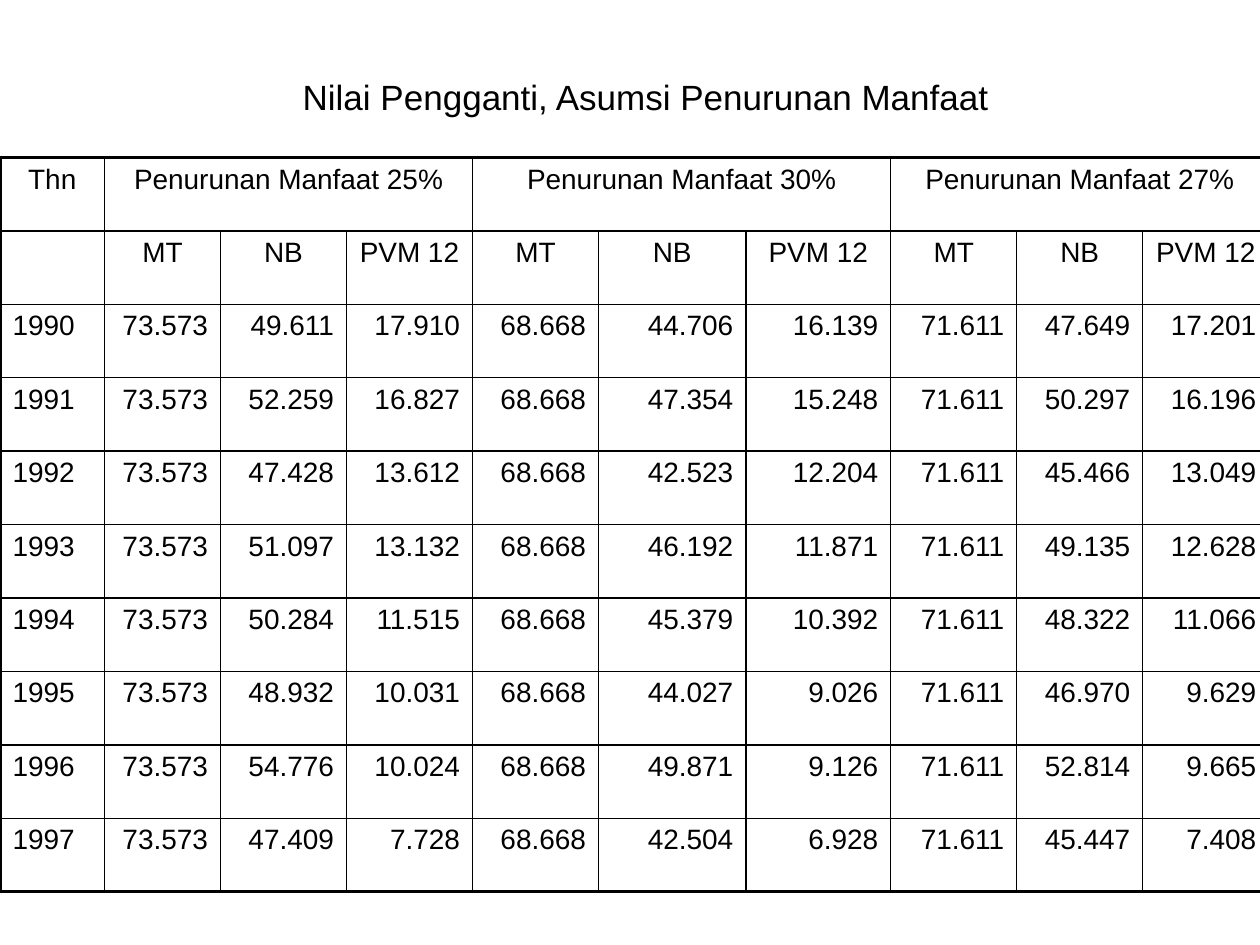
from lxml.etree import SubElement
from pptx import Presentation
from pptx.dml.color import RGBColor
from pptx.enum.text import MSO_ANCHOR as Anchor, PP_ALIGN as Align
from pptx.oxml.ns import qn
from pptx.util import Inches, Pt

TITLE = "Nilai Pengganti, Asumsi Penurunan Manfaat"
GROUPS = ["Penurunan Manfaat 25%", "Penurunan Manfaat 30%", "Penurunan Manfaat 27%"]
MEASURES = ["MT", "NB", "PVM 12"]
YEARS = [
    ("1990", "73.573", "49.611", "17.910", "68.668", "44.706", "16.139", "71.611", "47.649", "17.201"),
    ("1991", "73.573", "52.259", "16.827", "68.668", "47.354", "15.248", "71.611", "50.297", "16.196"),
    ("1992", "73.573", "47.428", "13.612", "68.668", "42.523", "12.204", "71.611", "45.466", "13.049"),
    ("1993", "73.573", "51.097", "13.132", "68.668", "46.192", "11.871", "71.611", "49.135", "12.628"),
    ("1994", "73.573", "50.284", "11.515", "68.668", "45.379", "10.392", "71.611", "48.322", "11.066"),
    ("1995", "73.573", "48.932", "10.031", "68.668", "44.027", "9.026", "71.611", "46.970", "9.629"),
    ("1996", "73.573", "54.776", "10.024", "68.668", "49.871", "9.126", "71.611", "52.814", "9.665"),
    ("1997", "73.573", "47.409", "7.728", "68.668", "42.504", "6.928", "71.611", "45.447", "7.408"),
]
COLUMN_WIDTHS = [0.83, 0.92, 1, 1, 1, 1.17, 1.15, 1, 1, 1]
FONT, BLACK = "Arial", "000000"
THIN, THICK = 1, 2.25


def color(value):
    """Turn a hex string into a colour."""
    return RGBColor.from_string(value)


def write(text_frame, text, size, align):
    """Set one formatted paragraph."""
    text_frame.text = text
    paragraph = text_frame.paragraphs[0]
    paragraph.alignment = align
    font = paragraph.font
    for run in paragraph.runs:
        font = run.font
    font.name, font.size = FONT, Pt(size)
    font.color.rgb = color(BLACK)


def set_borders(cell, outer_edges):
    """Draw thick lines on the outer edges and thin lines elsewhere."""
    properties = cell._tc.get_or_add_tcPr()
    for edge, is_outer in outer_edges.items():
        width = Pt(THICK if is_outer else THIN)
        line = SubElement(properties, qn(f"a:ln{edge}"), w=str(width))
        fill = SubElement(line, qn("a:solidFill"))
        SubElement(fill, qn("a:srgbClr"), val=BLACK)
    cell.fill.background()


def add_title(slide):
    """Add the heading above the table."""
    title = slide.shapes.add_textbox(Inches(0.25), Inches(0.33), Inches(9.75), Inches(0.87))
    title.text_frame.word_wrap = True
    title.text_frame.vertical_anchor = Anchor.MIDDLE
    write(title.text_frame, TITLE, 20, Align.CENTER)


def add_value_table(slide):
    """Add the table of replacement values by year."""
    group_row = ["Thn"]
    for group in GROUPS:
        group_row += [group, "", ""]
    headers = [group_row, [""] + MEASURES * len(GROUPS)]
    rows = headers + YEARS
    last_row, last_column = len(rows) - 1, len(COLUMN_WIDTHS) - 1
    table = slide.shapes.add_table(
        len(rows), len(COLUMN_WIDTHS), Inches(0), Inches(1.25),
        Inches(sum(COLUMN_WIDTHS)), Inches(5.83)).table
    table.first_row = table.horz_banding = False
    for column, width in zip(table.columns, COLUMN_WIDTHS):
        column.width = Inches(width)
    for start in range(1, last_column, len(MEASURES)):
        table.cell(0, start).merge(table.cell(0, start + len(MEASURES) - 1))
    for r, values in enumerate(rows):
        for c, value in enumerate(values):
            cell = table.cell(r, c)
            if r < len(headers):
                align = Align.CENTER
            else:
                align = Align.RIGHT if c else Align.LEFT
            write(cell.text_frame, value, 16, align)
            right = c + cell.span_width - 1 if cell.is_merge_origin else c
            set_borders(cell, {"L": c == 0, "R": right == last_column,
                               "T": r == 0, "B": r == last_row})


def main():
    """Build and save the slide."""
    presentation = Presentation()
    presentation.slide_width, presentation.slide_height = Inches(10), Inches(7.5)
    slide = presentation.slides.add_slide(presentation.slide_layouts[6])
    add_title(slide)
    add_value_table(slide)
    presentation.save("out.pptx")


if __name__ == "__main__":
    main()
